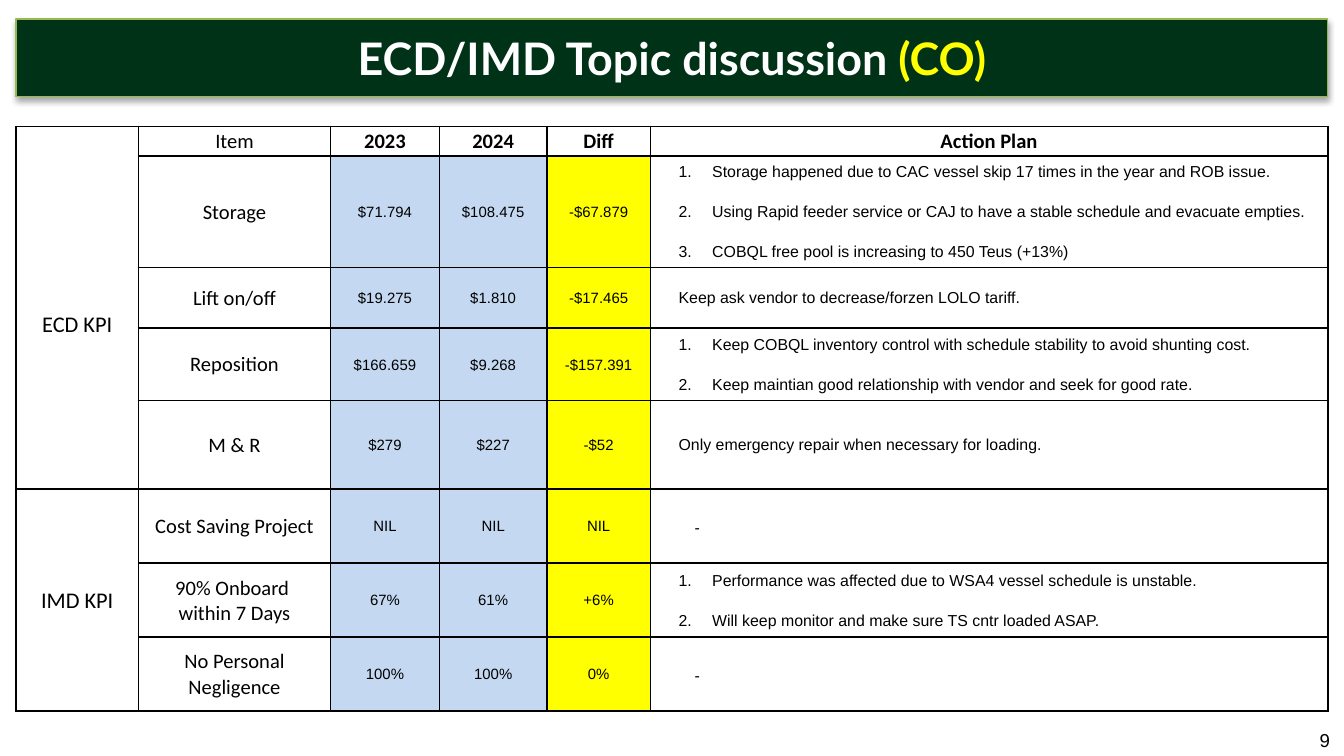
"""Build the ECD/IMD topic discussion slide with its KPI table."""
from lxml import etree
from pptx import Presentation
from pptx.dml.color import RGBColor
from pptx.enum.shapes import MSO_SHAPE
from pptx.enum.text import MSO_ANCHOR, PP_ALIGN
from pptx.oxml import parse_xml
from pptx.oxml.ns import qn
from pptx.util import Inches, Pt

RECTANGLE = MSO_SHAPE.RECTANGLE
MIDDLE = MSO_ANCHOR.MIDDLE
CENTER, LEFT = PP_ALIGN.CENTER, PP_ALIGN.LEFT

BLACK = RGBColor(0x00, 0x00, 0x00)
WHITE = RGBColor(0xFF, 0xFF, 0xFF)
YELLOW = RGBColor(0xFF, 0xFF, 0x00)
BLUE = RGBColor(0xC5, 0xD8, 0xF1)
DARK_GREEN = RGBColor(0x00, 0x32, 0x17)
LIGHT_GREEN = RGBColor(0x97, 0xB8, 0x53)

TITLE = [("ECD/IMD Topic discussion ", WHITE), ("(CO)", YELLOW)]
PAGE_NUMBER = "9"
HEADER = ["Item", "2023", "2024", "Diff", "Action Plan"]
ROWS = [
    ("Storage", "$71.794", "$108.475", "-$67.879", [
        "Storage happened due to CAC vessel skip 17 times in the year and ROB issue.",
        "Using Rapid feeder service or CAJ to have a stable schedule and evacuate empties.",
        "COBQL free pool is increasing to 450 Teus (+13%)"]),
    ("Lift on/off", "$19.275", "$1.810", "-$17.465",
     ["Keep ask vendor to decrease/forzen LOLO tariff."]),
    ("Reposition", "$166.659", "$9.268", "-$157.391", [
        "Keep COBQL inventory control with schedule stability to avoid shunting cost.",
        "Keep maintian good relationship with vendor and seek for good rate."]),
    ("M & R", "$279", "$227", "-$52", ["Only emergency repair when necessary for loading."]),
    ("Cost Saving Project", "NIL", "NIL", "NIL", ["　-"]),
    ("90% Onboard \nwithin 7 Days", "67%", "61%", "+6%", [
        "Performance was affected due to WSA4 vessel schedule is unstable.",
        "Will keep monitor and make sure TS cntr loaded ASAP."]),
    ("No Personal Negligence", "100%", "100%", "0%", ["　-"]),
]
GROUPS = [("ECD KPI", 0, 4, 0.25), ("IMD KPI", 5, 7, 0.01)]
FILLS = [BLUE, BLUE, YELLOW]

SLIDE_WIDTH = 10
SLIDE_HEIGHT = SLIDE_WIDTH * 9 / 16
MARGIN = 0.12
CONTENT_WIDTH = SLIDE_WIDTH - 2 * MARGIN
COLUMN_WIDTHS = [0.91, 1.43, 0.81, 0.8, 0.77, 5.04]
ROW_HEIGHTS = [0.22, 0.83, 0.45, 0.54, 0.66, 0.55, 0.55, 0.55]
NAMESPACE = 'xmlns:a="http://schemas.openxmlformats.org/drawingml/2006/main"'


def format_runs(paragraph, size, font, color=BLACK, bold=False):
    for run in paragraph.runs:
        run.font.size = Pt(size)
        run.font.name = font
        run.font.bold = bold
        run.font.color.rgb = color


def write_cell(cell, text, size, font="Calibri", bold=False, align=CENTER):
    cell.text_frame.text = text
    for paragraph in cell.text_frame.paragraphs:
        paragraph.alignment = align
        format_runs(paragraph, size, font, bold=bold)


def style_cell(cell, fill):
    cell.vertical_anchor = MIDDLE
    cell.margin_left = cell.margin_right = cell.margin_top = Inches(0.01)
    cell.margin_bottom = 0
    properties = cell._tc.get_or_add_tcPr()
    for side in ("lnL", "lnR", "lnT", "lnB"):
        properties.append(parse_xml(
            f'<a:{side} {NAMESPACE} w="{Pt(1)}"><a:solidFill>'
            f'<a:srgbClr val="{BLACK}"/></a:solidFill></a:{side}>'))
    cell.fill.solid()
    cell.fill.fore_color.rgb = fill


def write_plan(cell, items):
    write_cell(cell, "\n".join(items), 8.5, "Arial", align=LEFT)
    numbered = len(items) > 1
    for paragraph in cell.text_frame.paragraphs:
        properties = paragraph._p.get_or_add_pPr()
        properties.set("marL", str(Inches(0.45 if numbered else 0.2)))
        properties.set("indent", str(Inches(-0.25 if numbered else 0)))
        if numbered:
            paragraph.space_before = paragraph.space_after = Pt(6)
            etree.SubElement(properties, qn("a:buFont"), typeface="Arial")
            etree.SubElement(properties, qn("a:buAutoNum"), type="arabicPeriod")


def add_title(slide):
    banner = slide.shapes.add_shape(RECTANGLE, Inches(MARGIN), Inches(0.14),
                                    Inches(CONTENT_WIDTH), Inches(0.58))
    banner.fill.solid()
    banner.fill.fore_color.rgb = DARK_GREEN
    banner.line.color.rgb = LIGHT_GREEN
    banner.line.width = Pt(0.75)
    banner._element.spPr.append(parse_xml(
        f'<a:effectLst {NAMESPACE}><a:outerShdw blurRad="{Pt(3.1)}" dist="{Pt(1.8)}" '
        f'dir="5400000" rotWithShape="0"><a:srgbClr val="{BLACK}">'
        '<a:alpha val="35000"/></a:srgbClr></a:outerShdw></a:effectLst>'))
    frame = banner.text_frame
    frame.margin_left = frame.margin_right = frame.margin_top = frame.margin_bottom = 0
    frame.vertical_anchor = MIDDLE
    paragraph = frame.paragraphs[0]
    paragraph.alignment = CENTER
    for text, _ in TITLE:
        paragraph.add_run().text = text
    format_runs(paragraph, 24, "Lato", bold=True)
    for run, (_, color) in zip(paragraph.runs, TITLE):
        run.font.color.rgb = color


def add_kpi_table(slide):
    table = slide.shapes.add_table(
        len(ROW_HEIGHTS), len(COLUMN_WIDTHS), Inches(MARGIN), Inches(0.94),
        Inches(CONTENT_WIDTH), Inches(sum(ROW_HEIGHTS))).table
    table.first_row = table.horz_banding = False
    for column, width in zip(table.columns, COLUMN_WIDTHS):
        column.width = Inches(width)
    for row, height in zip(table.rows, ROW_HEIGHTS):
        row.height = Inches(height)
    for row in range(len(ROW_HEIGHTS)):
        for column in range(len(COLUMN_WIDTHS)):
            is_value = row > 0 and 2 <= column <= 4
            style_cell(table.cell(row, column), FILLS[column - 2] if is_value else WHITE)

    for column, text in enumerate(HEADER, start=1):
        write_cell(table.cell(0, column), text, 11, bold=column > 1)
    for row, (item, *values, plan) in enumerate(ROWS, start=1):
        write_cell(table.cell(row, 1), item, 11)
        for column, value in enumerate(values, start=2):
            write_cell(table.cell(row, column), value, 8, "Arial")
        write_plan(table.cell(row, 5), plan)
    for name, first, last, top_margin in GROUPS:
        cell = table.cell(first, 0)
        cell.merge(table.cell(last, 0))
        cell.margin_top = Inches(top_margin)
        write_cell(cell, name, 12)


def add_page_number(slide):
    box = slide.shapes.add_textbox(Inches(9.72), Inches(5.39), Inches(0.28), Inches(0.23))
    frame = box.text_frame
    frame.margin_right = 0
    frame.word_wrap = True
    frame.vertical_anchor = MIDDLE
    frame.text = PAGE_NUMBER
    format_runs(frame.paragraphs[0], 10, "Arial")


def main():
    presentation = Presentation()
    presentation.slide_width = Inches(SLIDE_WIDTH)
    presentation.slide_height = Inches(SLIDE_HEIGHT)
    slide = presentation.slides.add_slide(presentation.slide_layouts[6])
    add_title(slide)
    add_kpi_table(slide)
    add_page_number(slide)
    presentation.save("out.pptx")


if __name__ == "__main__":
    main()
